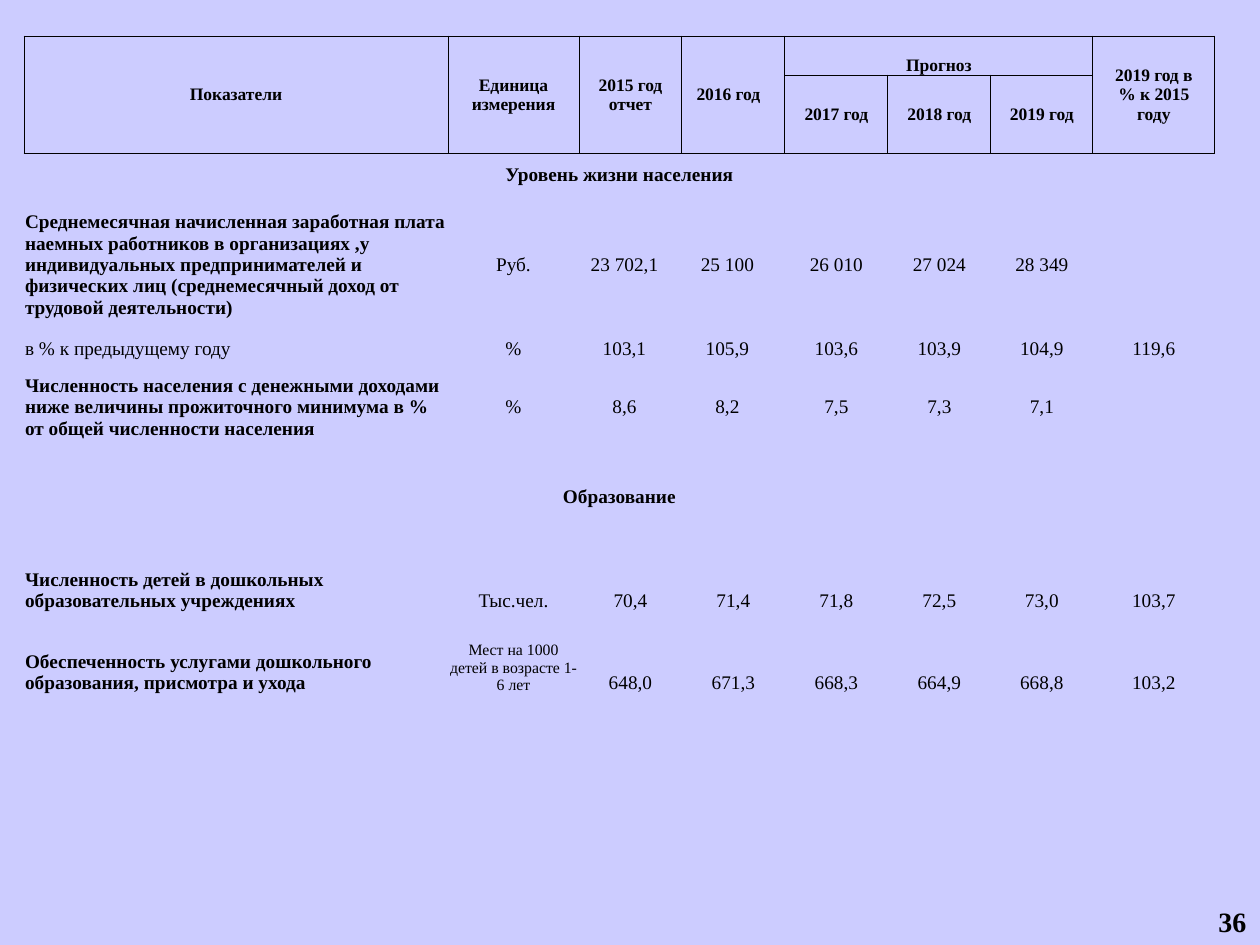
"""Build a slide with a table of living standard and education forecasts."""
import lxml.etree
import pptx
import pptx.dml.color
import pptx.enum.text
import pptx.oxml.ns
import pptx.util

HEAD = [
    (0, 0, 2, 1, "Показатели"),
    (0, 1, 2, 1, "Единица измерения"),
    (0, 2, 2, 2, "2015 год отчет"),
    (0, 4, 2, 1, "2016 год"),
    (0, 5, 1, 3, "Прогноз"),
    (0, 8, 2, 1, "2019 год в\v% к 2015\vгоду"),
    (1, 5, 1, 1, "2017 год"),
    (1, 6, 1, 1, "2018 год"),
    (1, 7, 1, 1, "2019 год"),
]
TITLES = {2: "Уровень жизни населения", 6: "Образование"}
BODY = {
    3: ("Среднемесячная начисленная заработная плата наемных работников "
        "в организациях ,у индивидуальных предпринимателей и физических лиц "
        "(среднемесячный доход от трудовой деятельности)",
        "Руб.", "23 702,1", "25 100", "26 010", "27 024", "28 349", ""),
    4: ("в % к предыдущему году",
        "%", "103,1", "105,9", "103,6", "103,9", "104,9", "119,6"),
    5: ("Численность населения с денежными доходами ниже величины "
        "прожиточного минимума в % от общей численности населения",
        "%", "8,6", "8,2", "7,5", "7,3", "7,1", ""),
    7: ("Численность детей в дошкольных образовательных учреждениях",
        "Тыс.чел.", "70,4", "71,4", "71,8", "72,5", "73,0", "103,7"),
    8: ("Обеспеченность услугами дошкольного образования, присмотра и ухода",
        "Мест на 1000 детей в возрасте 1-6 лет",
        "648,0", "671,3", "668,3", "664,9", "668,8", "103,2"),
}
PAGE = "36"
PLAIN, SMALL, LOW = 4, (8, 1), 6
COLS = [424, 131, 91, 12, 103, 103, 103, 102, 122]
ROWS = [39, 78, 44, 135, 34] + [82] * 4
THEME = {"font": "Times New Roman", "ink": "000000", "back": "CCCCFF",
         "head": 10, "body": 11, "small": 9, "page": 16, "line": 0.5}
NO_STYLE = "{2D5ABB26-0587-4C30-8999-92F81FD0307C}"

ANCHOR = pptx.enum.text.MSO_ANCHOR
ALIGN = pptx.enum.text.PP_ALIGN
qn = pptx.oxml.ns.qn


def px(n):
    return pptx.util.Emu(n * 914400 // 126)


def color(name):
    return pptx.dml.color.RGBColor.from_string(THEME[name])


def write(para, text, size, bold):
    for i, part in enumerate(text.split("\v")):
        if i:
            para.add_line_break()
        run = para.add_run()
        run.text = part
        font = run.font
        font.name, font.size, font.bold = THEME["font"], pptx.util.Pt(THEME[size]), bold
        font.color.rgb = color("ink")


def border(cell):
    props = cell._tc.get_or_add_tcPr()
    width = str(pptx.util.Pt(THEME["line"]))
    for side in ("L", "R", "T", "B"):
        line = lxml.etree.SubElement(props, qn("a:ln" + side), w=width)
        fill = lxml.etree.SubElement(line, qn("a:solidFill"))
        lxml.etree.SubElement(fill, qn("a:srgbClr"), val=THEME["ink"])


def put(table, row, col, tall, wide, text, size, bold, low=False):
    cell = table.cell(row, col)
    if tall * wide > 1:
        cell.merge(table.cell(row + tall - 1, col + wide - 1))
    cell.vertical_anchor = ANCHOR.BOTTOM if low else ANCHOR.MIDDLE
    para = cell.text_frame.paragraphs[0]
    para.alignment = ALIGN.LEFT if col == 0 and row in BODY else ALIGN.CENTER
    if text:
        write(para, text, size, bold)
    return cell


def fill(table):
    for r in range(len(ROWS)):
        for c in range(len(COLS)):
            cell = table.cell(r, c)
            cell.margin_left = cell.margin_right = cell.margin_top = px(1)
            cell.margin_bottom = 0
            if r < 2:
                border(cell)
            cell.fill.background()
    for row, col, tall, wide, text in HEAD:
        cell = put(table, row, col, tall, wide, text, "head", True, text == "Прогноз")
        if text == "2016 год":
            cell.margin_right = px(11)
    for row, text in TITLES.items():
        cell = put(table, row, 0, 1, len(COLS), text, "body", True, row >= LOW)
        if row >= LOW:
            cell.margin_bottom = px(22)
    for row, texts in BODY.items():
        low = row >= LOW
        pair = 2 if low else 3
        col = 0
        for text in texts:
            wide = 2 if col == pair else 1
            size = "small" if (row, col) == SMALL else "body"
            put(table, row, col, 1, wide, text, size, col == 0 and row != PLAIN, low)
            col += wide


def main():
    deck = pptx.Presentation()
    deck.slide_width, deck.slide_height = px(1260), px(945)
    slide = deck.slides.add_slide(deck.slide_layouts[6])
    back = slide.background.fill
    back.solid()
    back.fore_color.rgb = color("back")

    frame = slide.shapes.add_table(len(ROWS), len(COLS), px(24), px(36),
                                   px(sum(COLS)), px(sum(ROWS)))
    table = frame.table
    table.first_row = table.horz_banding = False
    table._tbl.tblPr.find(qn("a:tableStyleId")).text = NO_STYLE
    for col, size in zip(table.columns, COLS):
        col.width = px(size)
    for row, size in zip(table.rows, ROWS):
        row.height = px(size)
    fill(table)

    box = slide.shapes.add_textbox(px(1206), px(898), px(54), px(47))
    box.text_frame.word_wrap = False
    write(box.text_frame.paragraphs[0], PAGE, "page", True)
    deck.save("out.pptx")


if __name__ == "__main__":
    main()
